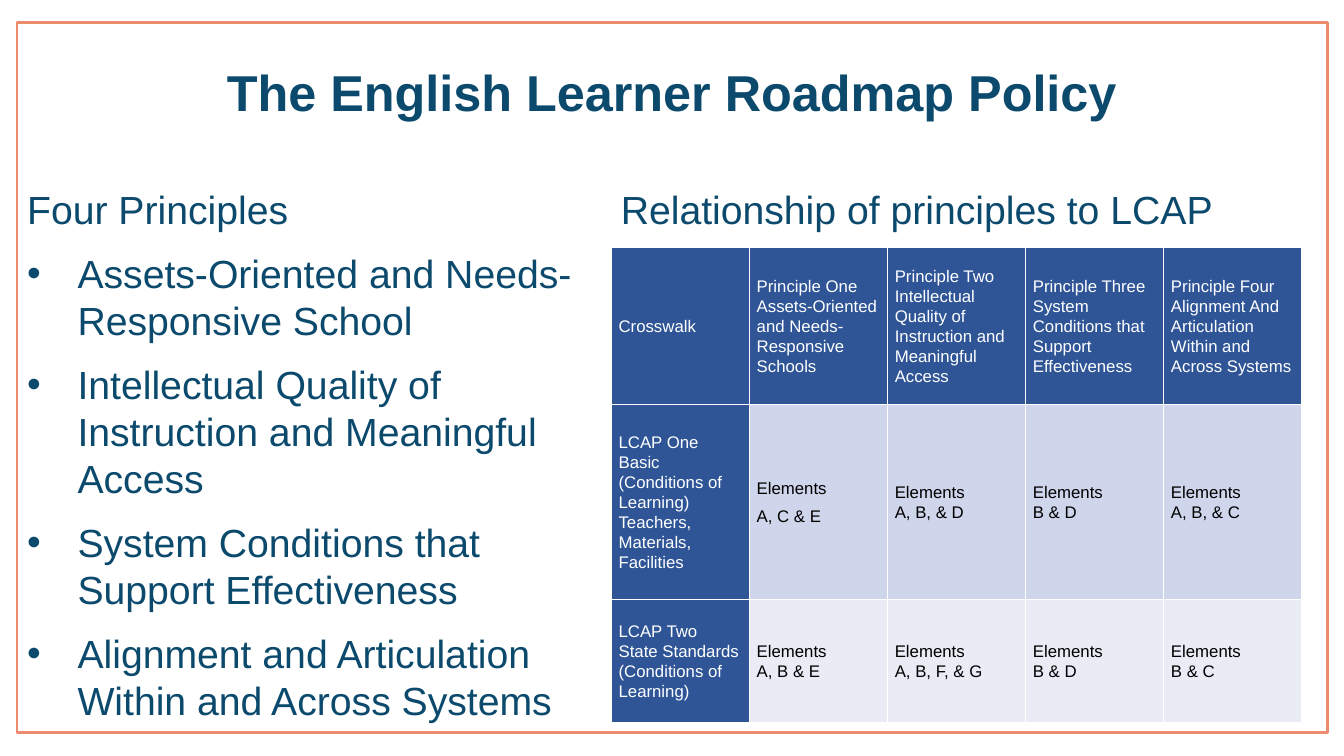
from lxml.etree import SubElement
from pptx import Presentation
from pptx.dml.color import RGBColor
from pptx.enum.shapes import MSO_SHAPE
from pptx.enum.text import MSO_ANCHOR, MSO_AUTO_SIZE, PP_ALIGN
from pptx.oxml.ns import qn
from pptx.util import Cm, Pt

NAVY = RGBColor(0x0C, 0x4A, 0x6D)
CORAL = RGBColor(0xED, 0x8B, 0x6F)
BLUE = RGBColor(0x2F, 0x55, 0x97)
LAVENDER = RGBColor(0xCF, 0xD5, 0xEA)
PALE = RGBColor(0xE9, 0xEB, 0xF5)
WHITE = RGBColor(0xFF, 0xFF, 0xFF)
BLACK = RGBColor(0x00, 0x00, 0x00)

PRINCIPLES = [
    "Assets-Oriented and Needs-Responsive School",
    "Intellectual Quality of Instruction and Meaningful Access",
    "System Conditions that Support Effectiveness",
    "Alignment and Articulation Within and Across Systems",
]
CROSSWALK = [
    [
        ["Crosswalk"],
        ["Principle One", "Assets-Oriented and Needs-Responsive Schools"],
        ["Principle Two", "Intellectual Quality of Instruction and Meaningful Access"],
        ["Principle Three", "System Conditions that Support Effectiveness"],
        ["Principle Four", "Alignment And Articulation Within and Across Systems"],
    ],
    [
        ["LCAP One", "Basic (Conditions of Learning) Teachers, Materials, Facilities"],
        ["Elements", "A, C & E"],
        ["Elements", "A, B, & D"],
        ["Elements", "B & D"],
        ["Elements", "A, B, & C"],
    ],
    [
        ["LCAP Two", "State Standards", "(Conditions of", "Learning)"],
        ["Elements", "A, B & E"],
        ["Elements", "A, B, F, & G"],
        ["Elements", "B & D"],
        ["Elements", "B & C"],
    ],
]
ROW_HEIGHTS = [3.96, 4.9, 3.1]
ROW_FILLS = [BLUE, LAVENDER, PALE]


def add_paragraph(frame, index, text, size, color, spacing, bold=False):
    para = frame.paragraphs[0] if index == 0 else frame.add_paragraph()
    para.line_spacing = spacing
    para.space_before = Pt(0)
    span = para.add_run()
    span.text = text
    span.font.name = "Arial"
    span.font.size = Pt(size)
    span.font.bold = bold
    span.font.color.rgb = color
    return para


def place(box, left, top, width, height):
    box.left, box.top, box.width, box.height = Cm(left), Cm(top), Cm(width), Cm(height)
    box.text_frame.word_wrap = True
    box.text_frame.auto_size = MSO_AUTO_SIZE.NONE
    return box.text_frame


deck = Presentation()
deck.slide_width, deck.slide_height = Cm(33.87), Cm(19.05)
page = deck.slides.add_slide(deck.slide_layouts[3])
title, principles, relationship = page.placeholders[0], page.placeholders[1], page.placeholders[2]
for box in list(page.placeholders):
    if box.placeholder_format.idx > 2:
        box.element.getparent().remove(box.element)

border = page.shapes.add_shape(MSO_SHAPE.RECTANGLE, Cm(0.43), Cm(0.56), Cm(33.02), Cm(17.91))
border.shadow.inherit = False
border.fill.background()
border.line.color.rgb = CORAL
border.line.width = Pt(2)

frame = place(title, 0.43, 0.56, 33.02, 3.68)
frame.vertical_anchor = MSO_ANCHOR.MIDDLE
para = add_paragraph(frame, 0, "The English Learner Roadmap Policy", 36, NAVY, 0.9, True)
para.alignment = PP_ALIGN.CENTER

columns = [
    (place(principles, 0.43, 4.55, 14.33, 13.94), ["Four Principles"] + PRINCIPLES),
    (place(relationship, 15.39, 4.55, 18.03, 13.94), ["Relationship of principles to LCAP"]),
]
for frame, lines in columns:
    for index, text in enumerate(lines):
        para = add_paragraph(frame, index, text, 28, NAVY, 1.0)
        para.space_after = Pt(12)
        properties = para._p.get_or_add_pPr()
        indent = Cm(1.27) if index else 0
        properties.set("marL", str(indent))
        properties.set("indent", str(-indent))
        if index:
            SubElement(properties, qn("a:buFont"), typeface="Arial")
            SubElement(properties, qn("a:buChar"), char="•")
        else:
            SubElement(properties, qn("a:buNone"))

table = page.shapes.add_table(3, 5, Cm(15.41), Cm(6.24), Cm(17.4), Cm(11.96)).table
for column in table.columns:
    column.width = Cm(3.48)
for row_index, row in enumerate(CROSSWALK):
    table.rows[row_index].height = Cm(ROW_HEIGHTS[row_index])
    for column_index, lines in enumerate(row):
        heading = row_index == 0 or column_index == 0
        cell = table.cell(row_index, column_index)
        cell.vertical_anchor = MSO_ANCHOR.MIDDLE
        cell.margin_left = cell.margin_right = Cm(0.18)
        cell.margin_top = cell.margin_bottom = 0
        for index, text in enumerate(lines):
            spacing = 1.5 if text == "A, C & E" else 1.06
            add_paragraph(cell.text_frame, index, text, 12, WHITE if heading else BLACK, spacing)
        properties = cell._tc.get_or_add_tcPr()
        for side in ("lnL", "lnR", "lnT", "lnB"):
            edge = SubElement(properties, qn(f"a:{side}"), w=str(Pt(1)))
            SubElement(SubElement(edge, qn("a:solidFill")), qn("a:srgbClr"), val=str(WHITE))
        cell.fill.solid()
        cell.fill.fore_color.rgb = BLUE if heading else ROW_FILLS[row_index]

deck.save("out.pptx")
